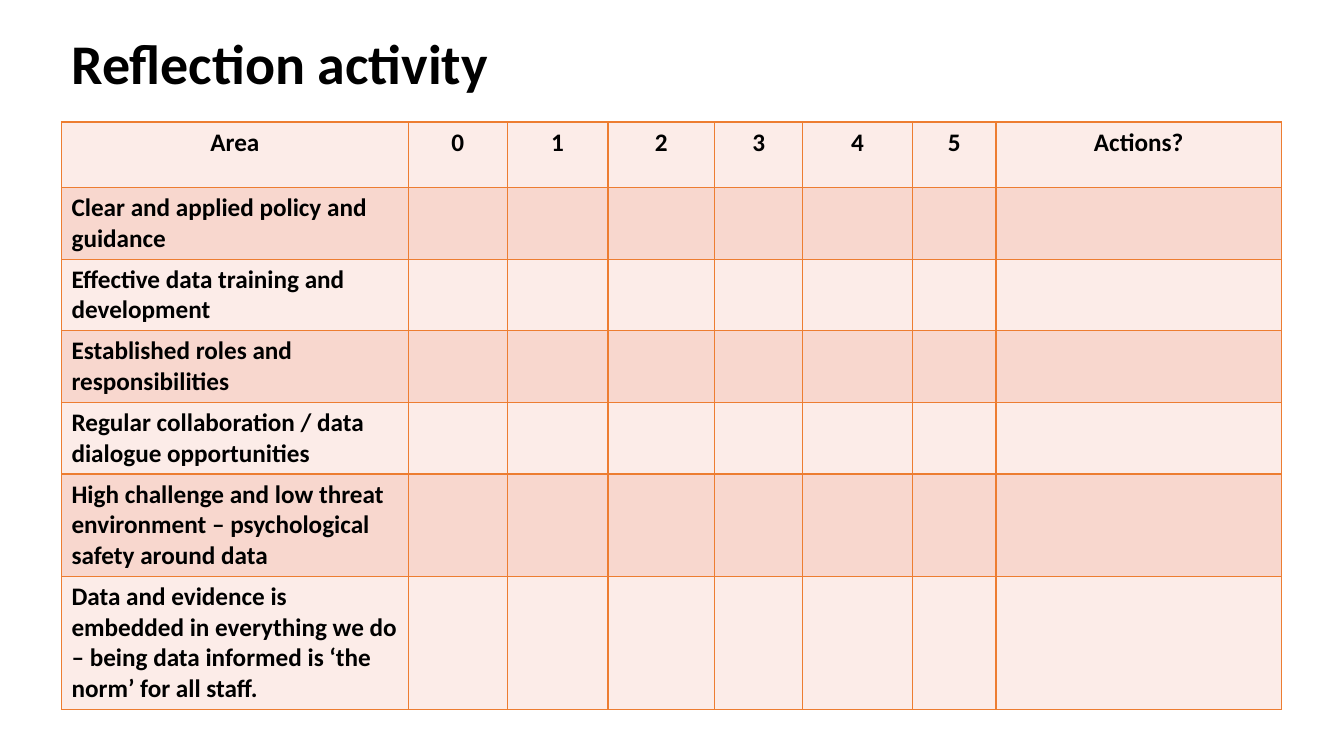
from lxml.etree import SubElement
from pptx import Presentation
from pptx.dml.color import RGBColor
from pptx.enum.text import MSO_ANCHOR, PP_ALIGN
from pptx.oxml.ns import qn
from pptx.util import Inches, Pt

COLORS = {"text": "000000", "line": "ED7D31", "light": "FCECE8", "dark": "F8D7CE"}
FONT = "Calibri"
HEADS = ["Area", "0", "1", "2", "3", "4", "5", "Actions?"]
AREAS = [
    "Clear and applied policy and guidance",
    "Effective data training and development",
    "Established roles and responsibilities",
    "Regular collaboration / data dialogue opportunities",
    "High challenge and low threat environment – psychological safety around data",
    "Data and evidence is embedded in everything we do – being data informed is ‘the norm’ for all staff.",
]
WIDTHS = [3.44, 0.98, 1, 1.06, 0.87, 1.09, 0.83, 2.83]
ROW = 0.65


def style(para, size):
    for run in para.runs:
        run.font.name = FONT
        run.font.size = Pt(size)
        run.font.bold = True
        run.font.color.rgb = RGBColor.from_string(COLORS["text"])


def border(cell):
    props = cell._tc.get_or_add_tcPr()
    for side in ("lnL", "lnR", "lnT", "lnB"):
        line = SubElement(props, qn(f"a:{side}"), w=str(Pt(1)))
        fill = SubElement(line, qn("a:solidFill"))
        SubElement(fill, qn("a:srgbClr"), val=COLORS["line"])


def add_title(slide, left, top, width, height):
    box = slide.shapes.add_textbox(Inches(left), Inches(top), Inches(width), Inches(height))
    frame = box.text_frame
    frame.word_wrap = True
    frame.vertical_anchor = MSO_ANCHOR.MIDDLE
    frame.text = "Reflection activity"
    para = frame.paragraphs[0]
    para.line_spacing = 0.9
    style(para, 40)


def add_grid(slide, left, top):
    rows = [HEADS] + [[area] + [""] * (len(HEADS) - 1) for area in AREAS]
    table = slide.shapes.add_table(
        len(rows), len(HEADS), Inches(left), Inches(top),
        Inches(sum(WIDTHS)), Inches(ROW * len(rows))).table
    for col, width in zip(table.columns, WIDTHS):
        col.width = Inches(width)
    for r, texts in enumerate(rows):
        table.rows[r].height = Inches(ROW)
        for c, text in enumerate(texts):
            cell = table.cell(r, c)
            border(cell)
            cell.fill.solid()
            shade = COLORS["dark" if r % 2 else "light"]
            cell.fill.fore_color.rgb = RGBColor.from_string(shade)
            if text:
                cell.text_frame.text = text
                para = cell.text_frame.paragraphs[0]
                para.alignment = PP_ALIGN.LEFT if r else PP_ALIGN.CENTER
                style(para, 18)


def main():
    deck = Presentation()
    deck.slide_width, deck.slide_height = Inches(13.33), Inches(7.5)
    slide = deck.slides.add_slide(deck.slide_layouts[6])
    # Rating table
    add_grid(slide, 0.61, 1.21)
    # Heading
    add_title(slide, 0.61, 0.24, 11.5, 0.83)
    deck.save("out.pptx")


if __name__ == "__main__":
    main()
